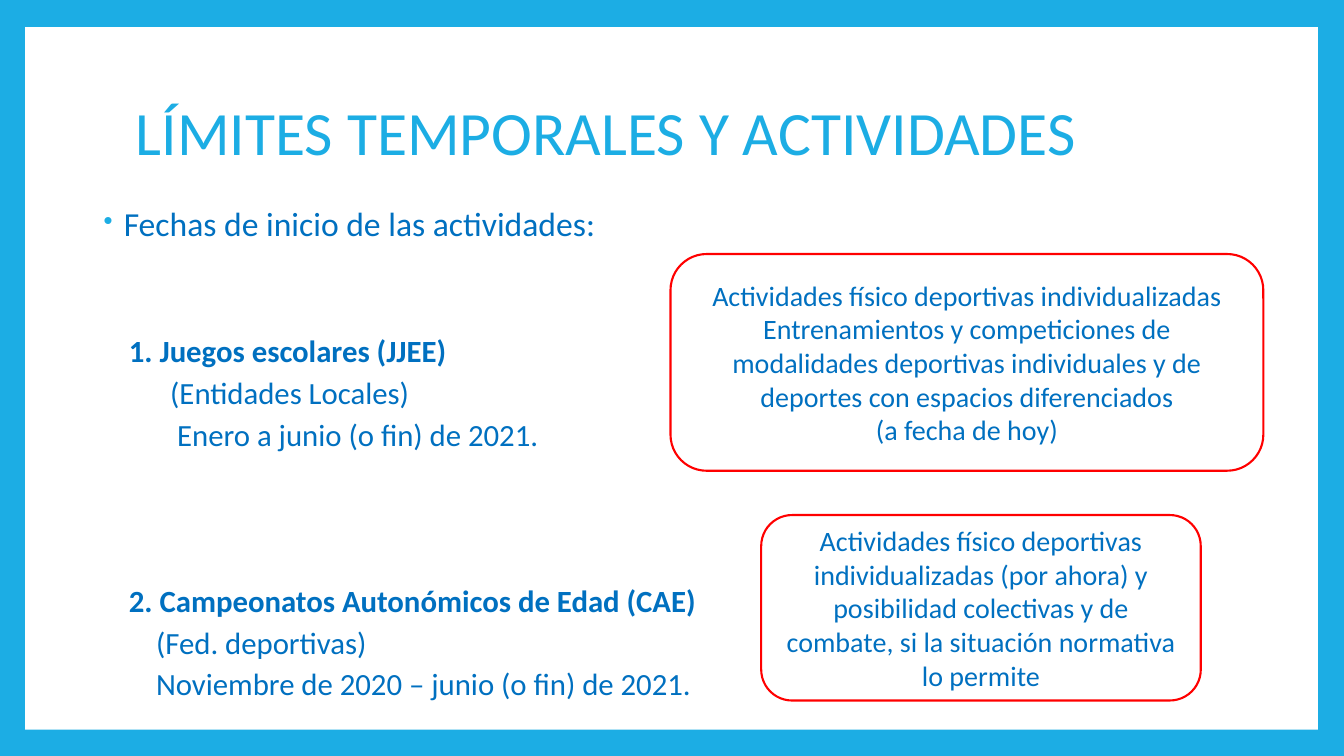
from lxml import etree
from pptx import Presentation
from pptx.dml.color import RGBColor
from pptx.enum.shapes import MSO_SHAPE
from pptx.enum.text import MSO_ANCHOR, PP_ALIGN
from pptx.oxml.ns import qn
from pptx.util import Inches, Pt

SKY = RGBColor(0x1C, 0xAD, 0xE4)
BLUE = RGBColor(0x00, 0x70, 0xC0)
RED = RGBColor(0xFF, 0x00, 0x00)
WHITE = RGBColor(0xFF, 0xFF, 0xFF)


def add_run(p, text, size, color=BLUE, bold=False):
    r = p.add_run()
    r.text = text
    r.font.name = "Calibri"
    r.font.size = Pt(size)
    r.font.bold = bold
    r.font.color.rgb = color


def add_text_frame(s, x, y, w, h, anchor):
    tf = s.shapes.add_textbox(Inches(x), Inches(y), Inches(w), Inches(h)).text_frame
    tf.word_wrap = True
    tf.vertical_anchor = anchor
    return tf


def add_panel(s):
    sp = s.shapes.add_shape(MSO_SHAPE.RECTANGLE, Inches(0.25), Inches(0.27),
                            Inches(12.82), Inches(6.97))
    sp.shadow.inherit = False
    sp.fill.solid()
    sp.fill.fore_color.rgb = WHITE
    sp.line.fill.background()


def add_title(s, text):
    tf = add_text_frame(s, 1.25, 0.6, 10.8, 1.48, MSO_ANCHOR.MIDDLE)
    p = tf.paragraphs[0]
    p.line_spacing = 0.9
    add_run(p, text, 44, SKY)


def add_bullet(p, text):
    p.line_spacing = 0.9
    pPr = p._p.get_or_add_pPr()
    pPr.set("marL", str(Inches(0.25)))
    pPr.set("indent", str(Inches(-0.2)))
    color = etree.SubElement(pPr, qn("a:buClr"))
    etree.SubElement(color, qn("a:srgbClr"), val=str(SKY))
    etree.SubElement(pPr, qn("a:buSzPct"), val="80000")
    etree.SubElement(pPr, qn("a:buChar"), char="•")
    add_run(p, text, 24)


def add_item(tf, text, left, before=2, bold=False):
    p = tf.add_paragraph()
    p.line_spacing = 0.9
    p.space_before = Pt(before)
    p.space_after = Pt(4)
    p._p.get_or_add_pPr().set("marL", str(Inches(left)))
    add_run(p, text, 22, bold=bold)


def add_callout(s, x, y, w, h, lines):
    sp = s.shapes.add_shape(MSO_SHAPE.ROUNDED_RECTANGLE, Inches(x), Inches(y),
                            Inches(w), Inches(h))
    sp.shadow.inherit = False
    sp.fill.background()
    sp.line.color.rgb = RED
    sp.line.width = Pt(1.5)
    tf = sp.text_frame
    tf.word_wrap = True
    tf.vertical_anchor = MSO_ANCHOR.MIDDLE
    for i, text in enumerate(lines):
        p = tf.add_paragraph() if i else tf.paragraphs[0]
        p.alignment = PP_ALIGN.CENTER
        add_run(p, text, 20)


def main():
    prs = Presentation()
    prs.slide_width, prs.slide_height = Inches(13.33), Inches(7.5)
    s = prs.slides.add_slide(prs.slide_layouts[6])
    s.background.fill.solid()
    s.background.fill.fore_color.rgb = SKY

    add_panel(s)
    add_title(s, "LÍMITES TEMPORALES Y ACTIVIDADES")

    tf = add_text_frame(s, 0.88, 2.01, 11.17, 4.88, MSO_ANCHOR.TOP)
    add_bullet(tf.paragraphs[0], "Fechas de inicio de las actividades:")
    add_item(tf, "1. Juegos escolares (JJEE)", 0.3, before=66, bold=True)
    add_item(tf, "(Entidades Locales)", 0.71)
    add_item(tf, "Enero a junio (o fin) de 2021.", 0.78)
    add_item(tf, "2. Campeonatos Autonómicos de Edad (CAE)", 0.3, before=91, bold=True)
    add_item(tf, "(Fed. deportivas)", 0.57)
    add_item(tf, "Noviembre de 2020 – junio (o fin) de 2021.", 0.57)

    add_callout(s, 6.65, 2.52, 5.88, 2.15, [
        "Actividades físico deportivas individualizadas",
        "Entrenamientos y competiciones de modalidades deportivas individuales "
        "y de deportes con espacios diferenciados",
        "(a fecha de hoy)",
    ])
    add_callout(s, 7.55, 5.11, 4.36, 1.84, [
        "Actividades físico deportivas individualizadas (por ahora) y posibilidad "
        "colectivas y de combate, si la situación normativa lo permite",
    ])
    prs.save("out.pptx")


if __name__ == "__main__":
    main()
